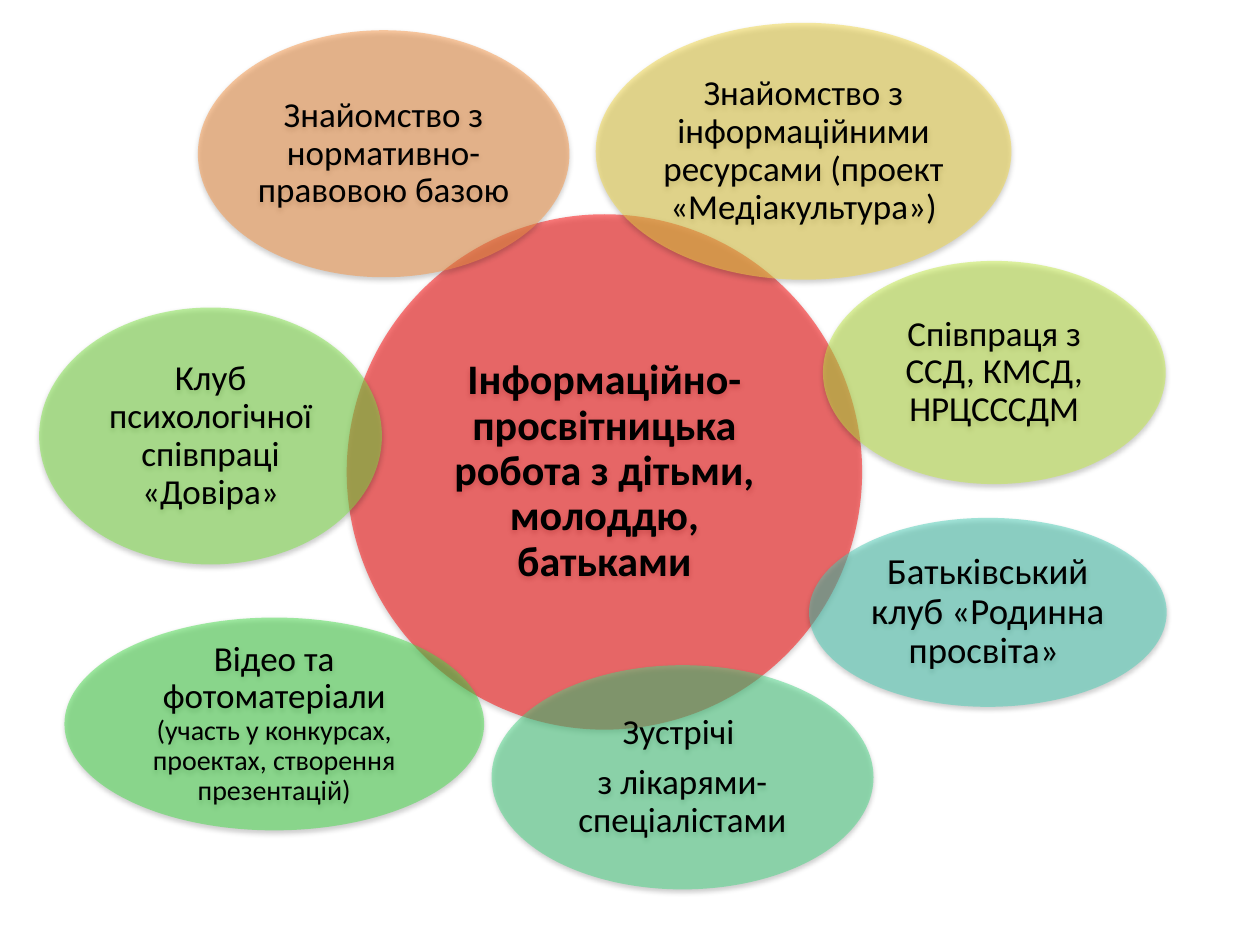
from lxml import etree
from pptx import Presentation, util as u
from pptx.dml.color import RGBColor
from pptx.enum import shapes, text
from pptx.oxml.ns import qn

COLORS = {
    "red": "FF0000", "teal": "49CEB6", "mint": "48D684", "green": "47DD4B",
    "grass": "80E446", "lime": "C3EB46", "yellow": "F1D746", "orange": "F79646",
    "black": "000000",
}
FONT = "Calibri"

# Back to front: colour, (left, top, width, height) in cm, bold,
# paragraphs as lists of (text, size) runs
OVALS = [
    ("red", (6.99, 4.32, 10.39, 10.39), True,
     [[("Інформаційно-просвітницька робота з дітьми, молоддю, батьками", 24)]]),
    ("teal", (16.31, 10.44, 7.21, 3.81), False,
     [[("Батьківський клуб «Родинна просвіта» ", 21)]]),
    ("mint", (9.91, 13.41, 7.7, 4.52), False,
     [[("Зустрічі ", 20)], [("з лікарями-спеціалістами", 20)]]),
    ("green", (1.3, 12.45, 8.46, 4.29), False,
     [[("Відео та фотоматеріали ", 20),
       ("(участь у конкурсах, проектах, створення презентацій)", 16)]]),
    ("grass", (0.79, 6.2, 6.91, 5.18), False,
     [[("Клуб психологічної співпраці «Довіра»", 20)]]),
    ("lime", (16.59, 5.26, 6.91, 4.5), False,
     [[("Співпраця з ССД, КМСД, НРЦСССДМ", 20)]]),
    ("yellow", (12.01, 0.46, 8.38, 5.18), False,
     [[("Знайомство з інформаційними ресурсами (проект «Медіакультура»)", 20)]]),
    ("orange", (3.99, 0.61, 7.49, 4.98), False,
     [[("Знайомство з нормативно-правовою базою ", 20)]]),
]


def rgb(name):
    return RGBColor.from_string(COLORS[name])


def add_alpha(color, percent):
    etree.SubElement(color, qn("a:alpha"), val=str(percent * 1000))


def add_shadow(oval):
    oval.shadow.inherit = False
    effects = oval._element.spPr.find(qn("a:effectLst"))
    shadow = etree.SubElement(
        effects, qn("a:outerShdw"), blurRad=str(u.Pt(3.1)), dist=str(u.Pt(1.6)),
        dir="5400000", rotWithShape="0")
    add_alpha(etree.SubElement(shadow, qn("a:srgbClr"), val=COLORS["black"]), 38)


def add_label(oval, paragraphs, bold):
    frame = oval.text_frame
    frame.word_wrap = True
    frame.vertical_anchor = text.MSO_ANCHOR.MIDDLE
    frame.margin_left = frame.margin_right = u.Cm(0.08)
    frame.margin_top = frame.margin_bottom = u.Cm(0.08)
    for i, runs in enumerate(paragraphs):
        paragraph = frame.add_paragraph() if i else frame.paragraphs[0]
        paragraph.alignment = text.PP_ALIGN.CENTER
        paragraph.line_spacing = 0.9
        paragraph.space_after = u.Pt(7)
        paragraph.font.name = FONT
        paragraph.font.bold = bold
        paragraph.font.color.rgb = rgb("black")
        for words, size in runs:
            run = paragraph.add_run()
            run.text = words
            run.font.size = u.Pt(size)


def main():
    prs = Presentation()
    prs.slide_width, prs.slide_height = u.Cm(25.4), u.Cm(19.05)
    slide = prs.slides.add_slide(prs.slide_layouts[6])

    # Central circle, then the activities around it
    for color, box, bold, paragraphs in OVALS:
        oval = slide.shapes.add_shape(shapes.MSO_SHAPE.OVAL, *map(u.Cm, box))
        oval.fill.solid()
        oval.fill.fore_color.rgb = rgb(color)
        add_alpha(oval._element.spPr.find(qn("a:solidFill"))[0], 50)
        oval.line.fill.background()
        add_shadow(oval)
        add_label(oval, paragraphs, bold)

    prs.save("out.pptx")


if __name__ == "__main__":
    main()
